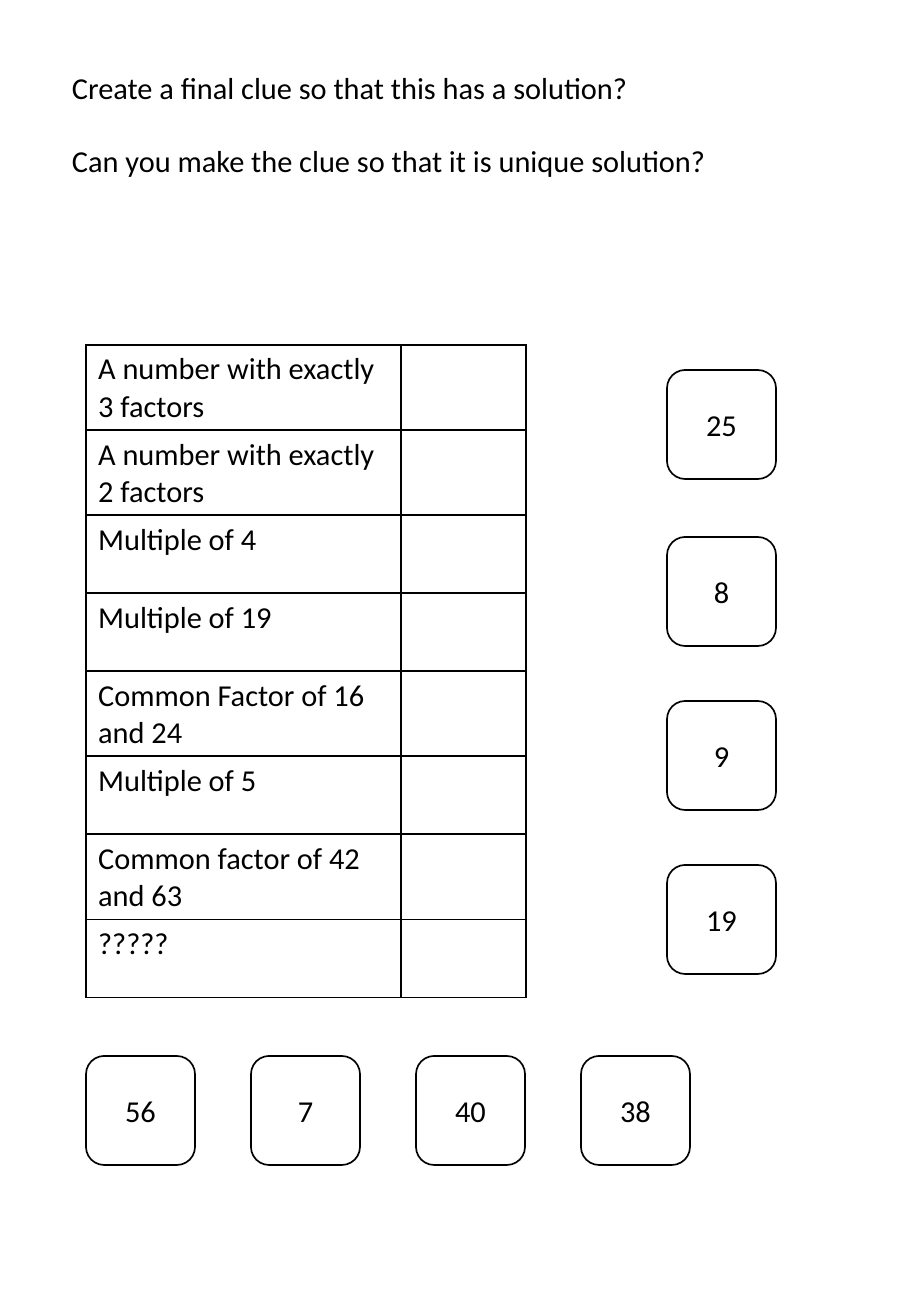
from dataclasses import dataclass

from lxml.etree import SubElement
from pptx import Presentation
from pptx.dml.color import RGBColor
from pptx.enum.shapes import MSO_SHAPE as Shape
from pptx.enum.text import MSO_ANCHOR as Anchor, PP_ALIGN as Align
from pptx.oxml.ns import qn
from pptx.util import Pt

EMU_PER_PX = 7526


@dataclass(frozen=True)
class Theme:
    """Colours, font and type sizes of the worksheet."""

    ink: str = "000000"
    paper: str = "FFFFFF"
    font: str = "Calibri"
    text_size: int = 18
    paragraph_gap: int = 22
    line_width: int = 1


THEME = Theme()

QUESTIONS = [
    "Create a final clue so that this has a solution?",
    "Can you make the clue so that it is unique solution?",
]
CLUES = [
    "A number with exactly 3 factors",
    "A number with exactly 2 factors",
    "Multiple of 4",
    "Multiple of 19",
    "Common Factor of 16 and 24",
    "Multiple of 5",
    "Common factor of 42 and 63",
    "?????",
]
SIDE_CARDS = [("25", 370), ("8", 537), ("9", 701), ("19", 865)]
BOTTOM_CARDS = ["56", "7", "40", "38"]

MARGIN = 86
CARD_SIZE = 109
CARD_STEP = 165
SIDE_LEFT = 667
BOTTOM_TOP = 1056
ROW_HEIGHT = 78
COLUMN_WIDTHS = [315, 125]


def px(length):
    """Turn whole pixels into EMU."""
    return length * EMU_PER_PX


def style_text(paragraph):
    """Give a paragraph the worksheet font."""
    paragraph.font.name = THEME.font
    paragraph.font.size = Pt(THEME.text_size)
    paragraph.font.color.rgb = RGBColor.from_string(THEME.ink)


def add_questions(slide):
    """Write the questions above the clue table."""
    frame = slide.shapes.add_textbox(px(60), px(63), px(781), px(197)).text_frame
    frame.word_wrap = True
    frame.text = "\n".join(QUESTIONS)
    for position, question in enumerate(frame.paragraphs):
        if position:
            question.space_before = Pt(THEME.paragraph_gap)
        style_text(question)


def outline_cell(cell):
    """Draw the four borders of a cell and leave it unfilled."""
    properties = cell._tc.get_or_add_tcPr()
    for side in ("lnL", "lnR", "lnT", "lnB"):
        border = SubElement(properties, qn(f"a:{side}"), w=str(Pt(THEME.line_width)))
        ink = SubElement(border, qn("a:solidFill"))
        SubElement(ink, qn("a:srgbClr"), val=THEME.ink)
    cell.fill.background()


def add_clue_table(slide):
    """Add the clues with an empty answer column."""
    table = slide.shapes.add_table(
        len(CLUES), len(COLUMN_WIDTHS), px(MARGIN), px(345),
        px(sum(COLUMN_WIDTHS)), px(ROW_HEIGHT * len(CLUES)),
    ).table
    table.first_row = table.horz_banding = False
    for column, width in zip(table.columns, COLUMN_WIDTHS):
        column.width = px(width)
    for row, clue in zip(table.rows, CLUES):
        row.height = px(ROW_HEIGHT)
        row.cells[0].text = clue
        for cell in row.cells:
            outline_cell(cell)
            style_text(cell.text_frame.paragraphs[0])


def add_card(slide, number, left, top):
    """Add one rounded number card."""
    card = slide.shapes.add_shape(
        Shape.ROUNDED_RECTANGLE, px(left), px(top), px(CARD_SIZE), px(CARD_SIZE)
    )
    card.shadow.inherit = False
    card.fill.solid()
    card.fill.fore_color.rgb = RGBColor.from_string(THEME.paper)
    card.line.color.rgb = RGBColor.from_string(THEME.ink)
    card.line.width = Pt(THEME.line_width)
    frame = card.text_frame
    frame.text = number
    frame.vertical_anchor = Anchor.MIDDLE
    label = frame.paragraphs[0]
    label.alignment = Align.CENTER
    style_text(label)


def main():
    """Build and save the worksheet."""
    deck = Presentation()
    deck.slide_width, deck.slide_height = px(911), px(1316)
    slide = deck.slides.add_slide(deck.slide_layouts[6])
    add_questions(slide)
    add_clue_table(slide)
    for number, top in SIDE_CARDS:
        add_card(slide, number, SIDE_LEFT, top)
    for position, number in enumerate(BOTTOM_CARDS):
        add_card(slide, number, MARGIN + position * CARD_STEP, BOTTOM_TOP)
    deck.save("out.pptx")


if __name__ == "__main__":
    main()
